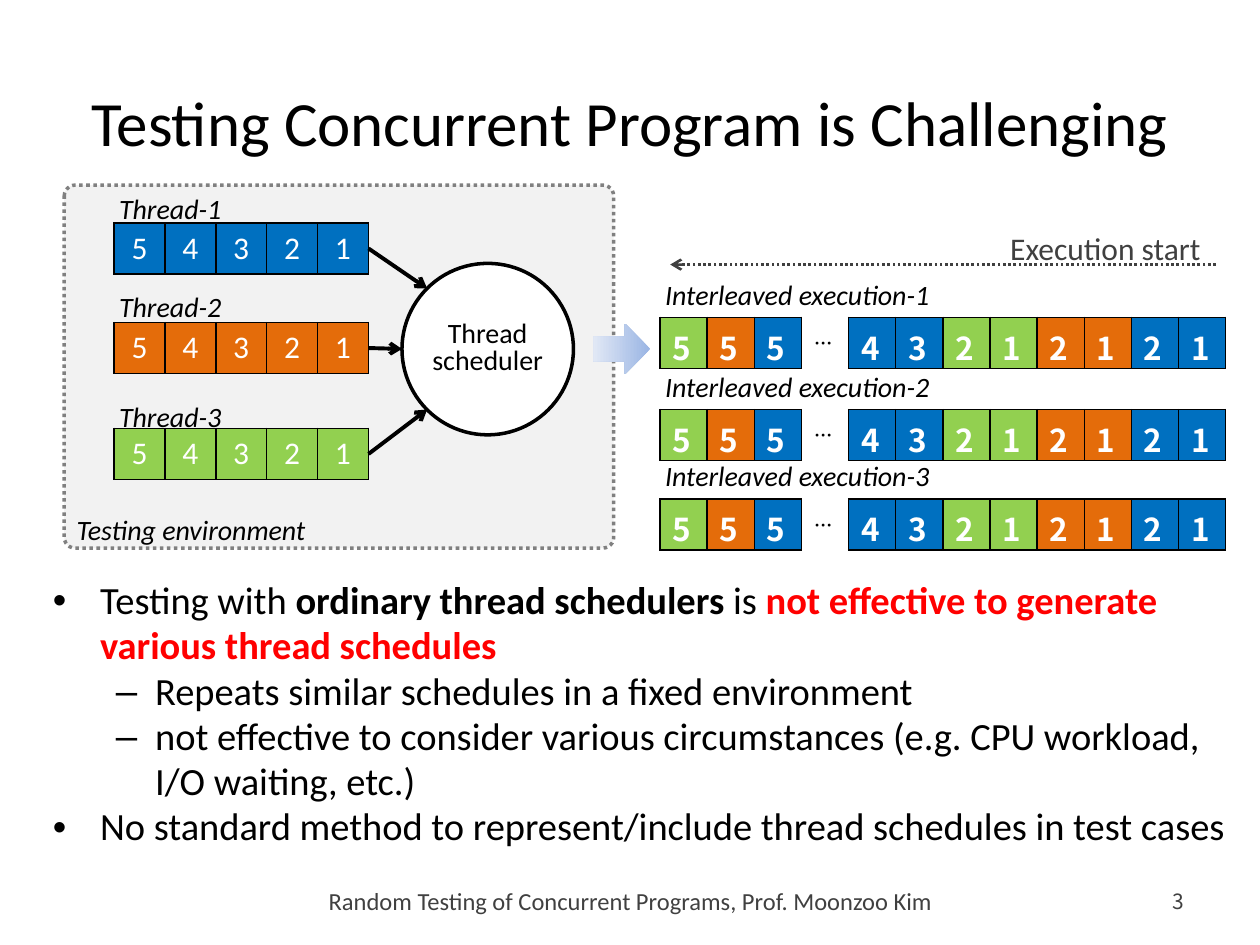
from dataclasses import dataclass
from lxml.etree import SubElement
from pptx import Presentation
from pptx.dml.color import RGBColor
from pptx.enum.dml import MSO_LINE
from pptx.enum.shapes import MSO_CONNECTOR, MSO_SHAPE
from pptx.enum.text import MSO_ANCHOR, MSO_AUTO_SIZE, PP_ALIGN
from pptx.oxml import parse_xml
from pptx.oxml.ns import nsdecls, qn
from pptx.util import Pt


@dataclass(frozen=True)
class Theme:
    font: str = "Calibri"
    digit_font: str = "Noto Sans CJK KR"
    black: str = "000000"
    white: str = "FFFFFF"
    gray: str = "404040"
    frame: str = "808080"
    panel: str = "F2F2F2"
    red: str = "FF0000"
    blue: str = "0070C0"
    orange: str = "E46C0A"
    green: str = "92D050"
    arrow_dark: str = "9AB5E4"
    arrow_light: str = "E1E8F5"
    title: int = 36
    body: int = 22
    cell: int = 18
    label: int = 16
    footer: int = 14
    number: int = 12


THEME = Theme()
LABEL = {"size": THEME.label, "italic": True}
ROW_HEIGHT = 29.2
BODY = [
    (0, [("Testing with ", {}),
         ("ordinary thread schedulers ", {"bold": True}),
         ("is ", {}),
         ("not effective to generate various thread schedules",
          {"bold": True, "color": THEME.red})]),
    (1, [("Repeats similar schedules in a fixed environment", {})]),
    (1, [("not effective to consider various circumstances "
          "(e.g. CPU workload, I/O waiting, etc.)", {})]),
    (0, [("No standard method to represent/include thread schedules in test cases", {})]),
]


def set_values(target, values):
    for name, value in values.items():
        setattr(target, name, value)


def add_run(paragraph, text, **values):
    run = paragraph.add_run()
    run.text = text
    values = {"name": THEME.font, "color": THEME.black, **values}
    run.font.color.rgb = RGBColor.from_string(values.pop("color"))
    values["size"] = Pt(values["size"])
    set_values(run.font, values)
    return run


def place(shape, left, top, width, height):
    set_values(shape, {"left": Pt(left), "top": Pt(top),
                       "width": Pt(width), "height": Pt(height)})


def add_label(slide, box, text, align=PP_ALIGN.LEFT, anchor=MSO_ANCHOR.TOP,
              inset=7.2, **font):
    shape = slide.shapes.add_textbox(*map(Pt, box))
    set_values(shape.text_frame, {"word_wrap": True, "vertical_anchor": anchor,
                                  "margin_left": Pt(inset)})
    paragraph = shape.text_frame.paragraphs[0]
    paragraph.alignment = align
    add_run(paragraph, text, **font)


def add_shape(slide, kind, box, fill=None, line=None, width=2):
    shape = slide.shapes.add_shape(kind, *map(Pt, box))
    shape.shadow.inherit = False
    if fill:
        shape.fill.solid()
        shape.fill.fore_color.rgb = RGBColor.from_string(fill)
    if line:
        shape.line.color.rgb = RGBColor.from_string(line)
        shape.line.width = Pt(width)
    else:
        shape.line.fill.background()
    return shape


def add_arrow(slide, start, end, color=THEME.black, width=2.25):
    connector = slide.shapes.add_connector(
        MSO_CONNECTOR.STRAIGHT, *map(Pt, (*start, *end)))
    connector.line.color.rgb = RGBColor.from_string(color)
    connector.line.width = Pt(width)
    SubElement(connector.line._get_or_add_ln(), qn("a:tailEnd"), type="arrow")
    SubElement(connector._element.spPr, qn("a:effectLst"))
    return connector


def set_borders(cell, sides="LRTB"):
    for index, side in enumerate("LRTB"):
        paint = (f'<a:solidFill><a:srgbClr val="{THEME.black}"/></a:solidFill>'
                 if side in sides else "<a:noFill/>")
        border = parse_xml(f'<a:ln{side} {nsdecls("a")} w="12700">{paint}</a:ln{side}>')
        cell._tc.get_or_add_tcPr().insert(index, border)


def add_queue(slide, left, top, width, cells, align, bottom=3.6, **font):
    """One-row table of (text, fill colour) cells."""
    frame = slide.shapes.add_table(
        1, len(cells), *map(Pt, (left, top, width, ROW_HEIGHT)))
    set_values(frame.table, {"first_row": False, "horz_banding": False})
    for index, (text, color) in enumerate(cells):
        frame.table.columns[index].width = Pt(width / len(cells))
        cell = frame.table.cell(0, index)
        cell.margin_bottom = Pt(bottom)
        cell.fill.solid()
        cell.fill.fore_color.rgb = RGBColor.from_string(color)
        gap = text == "…"
        set_borders(cell, "LR" if gap else "LRTB")
        paragraph = cell.text_frame.paragraphs[0]
        paragraph.alignment = align
        run = add_run(paragraph, text, size=THEME.cell,
                      color=THEME.black if gap else THEME.white, **font)
        if gap:
            cell.vertical_anchor = MSO_ANCHOR.MIDDLE
            run.font._element.set("baseline", "30000")


def add_environment(slide):
    # Frame and its caption
    frame = add_shape(slide, MSO_SHAPE.ROUNDED_RECTANGLE, (36.7, 105.8, 314, 207.4),
                      THEME.panel, THEME.frame)
    frame.adjustments[0] = 0.03
    frame.line.dash_style = MSO_LINE.ROUND_DOT
    add_label(slide, (36.7, 289.4, 190, 26.6), "Testing environment", **LABEL)

    # Scheduler
    circle = add_shape(slide, MSO_SHAPE.OVAL, (229.7, 150.5, 98, 98),
                       THEME.white, THEME.black)
    text_frame = circle.text_frame
    set_values(text_frame, {f"margin_{side}": 0
                            for side in ("left", "right", "top", "bottom")})
    text_frame.vertical_anchor = MSO_ANCHOR.MIDDLE
    for index, word in enumerate(("Thread", "scheduler")):
        paragraph = text_frame.add_paragraph() if index else text_frame.paragraphs[0]
        set_values(paragraph, {"alignment": PP_ALIGN.CENTER, "line_spacing": 0.8})
        add_run(paragraph, word, size=THEME.label)

    # Threads feeding the scheduler
    threads = [(127.4, 105.8, THEME.blue, (244.1, 164.9)),
               (184.3, 162, THEME.orange, (229.7, 199.4)),
               (244.8, 224.6, THEME.green, (244.1, 234))]
    for number, (top, label_top, color, target) in enumerate(threads, 1):
        add_queue(slide, 65.2, top, 145.4, [(digit, color) for digit in "54321"],
                  PP_ALIGN.CENTER)
        add_label(slide, (65.2, label_top, 96.5, 26.6), f"Thread-{number}",
                  inset=2.9, **LABEL)
        add_arrow(slide, (210.6, top + ROW_HEIGHT / 2), target)


def add_executions(slide):
    # Block arrow from the environment to the executions
    arrow = add_shape(slide, MSO_SHAPE.RIGHT_ARROW, (339.1, 185, 32.4, 28.8))
    arrow.fill.gradient()
    arrow.fill.gradient_angle = 180
    for stop, color in zip(arrow.fill.gradient_stops,
                           (THEME.arrow_dark, THEME.arrow_light)):
        stop.color.rgb = RGBColor.from_string(color)

    # Interleaved executions; only the first row keeps its bottom margin
    colors = {"b": THEME.blue, "o": THEME.orange, "g": THEME.green, "w": THEME.white}
    cells = [(text, colors[key]) for text, key in zip("555…43212121", "gobwbbggoobb")]
    for number, (top, bottom) in enumerate([(181.4, 3.6), (234, 0), (285.1, 0)], 1):
        add_queue(slide, 377.2, top, 323.3, cells, PP_ALIGN.LEFT, bottom,
                  name=THEME.digit_font, bold=True)
        add_label(slide, (377.2, top - 26.6, 226.8, 26.6),
                  f"Interleaved execution-{number}", inset=2.9, **LABEL)

    # Time direction
    time_line = add_arrow(slide, (694.8, 151.2), (383, 151.2), THEME.gray, 1.5)
    time_line.line.dash_style = MSO_LINE.ROUND_DOT
    add_label(slide, (570.2, 127.4, 130.3, 28.8), "Execution start",
              size=THEME.cell, color=THEME.gray)


def fill_placeholders(slide):
    title, body = slide.placeholders
    place(title, 3.6, 38.9, 712.8, 61.2)
    place(body, 23, 326.9, 688.3, 198.7)
    for shape in (title, body):
        shape.text_frame.auto_size = MSO_AUTO_SIZE.NONE
    add_run(title.text_frame.paragraphs[0], "Testing Concurrent Program is Challenging",
            size=THEME.title)
    for index, (level, runs) in enumerate(BODY):
        frame = body.text_frame
        paragraph = frame.add_paragraph() if index else frame.paragraphs[0]
        set_values(paragraph, {"level": level, "space_before": Pt(0),
                               "line_spacing": 0.98})
        for text, font in runs:
            add_run(paragraph, text, size=THEME.body, **font)


def add_footer(slide):
    add_label(slide, (115.9, 500.4, 488.9, 28.8),
              "Random Testing of Concurrent Programs, Prof. Moonzoo Kim",
              PP_ALIGN.CENTER, MSO_ANCHOR.MIDDLE, size=THEME.footer, color=THEME.gray)
    add_label(slide, (643.7, 500.4, 40.3, 28.8), "3", PP_ALIGN.RIGHT, MSO_ANCHOR.MIDDLE,
              size=THEME.number, color=THEME.gray, name=THEME.digit_font)


def main():
    presentation = Presentation()
    set_values(presentation, {"slide_width": Pt(720), "slide_height": Pt(540)})
    slide = presentation.slides.add_slide(presentation.slide_layouts[1])
    fill_placeholders(slide)
    add_environment(slide)
    add_executions(slide)
    add_footer(slide)
    presentation.save("out.pptx")


if __name__ == "__main__":
    main()
